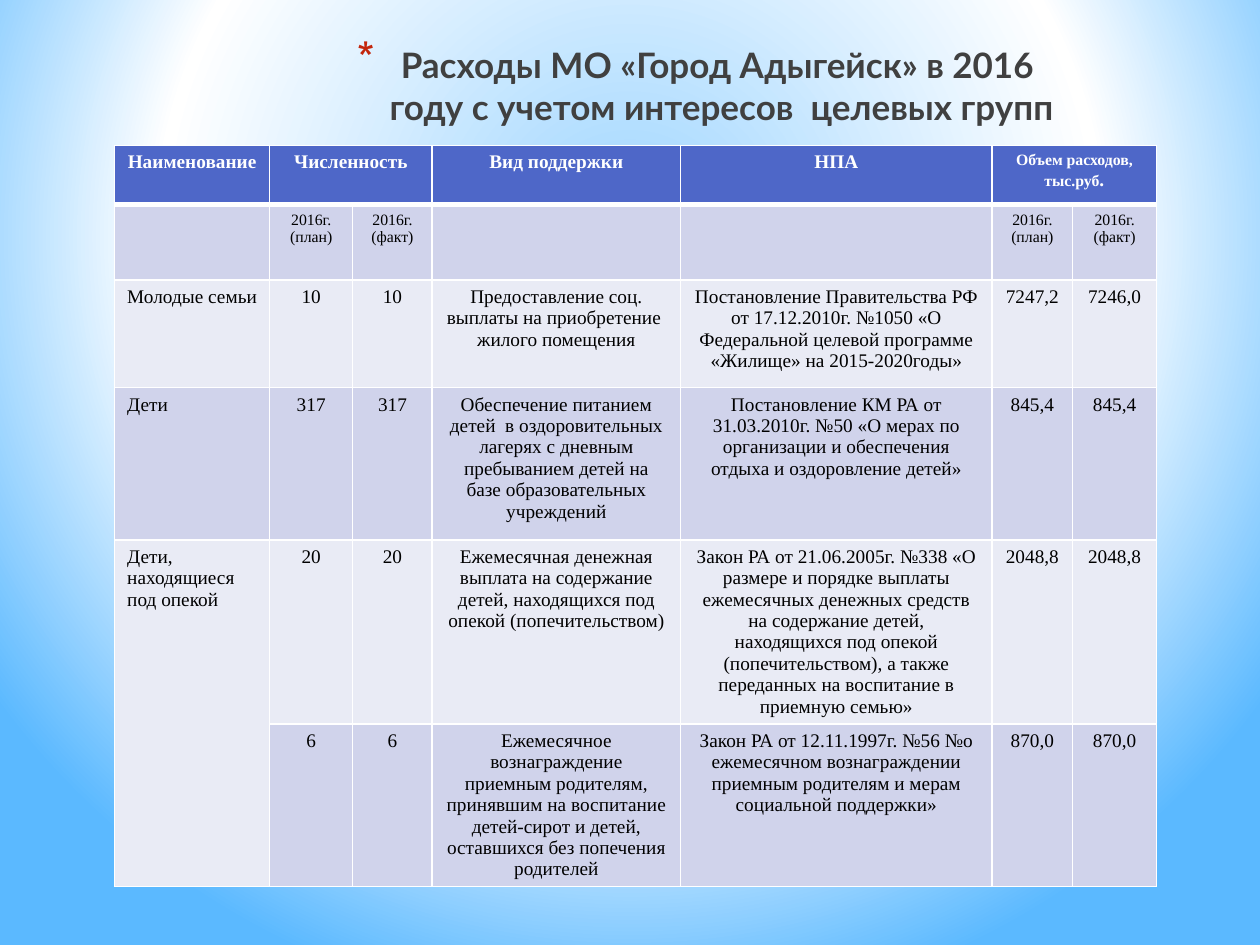
from pptx import Presentation
from pptx.dml.color import RGBColor
from pptx.enum.text import MSO_ANCHOR as Anchor, MSO_AUTO_SIZE as AutoSize, PP_ALIGN as Align
from pptx.oxml import parse_xml
from pptx.oxml.ns import nsdecls, qn
from pptx.util import Pt

WHITE, BLACK, TITLE, BULLET = "FFFFFF", "000000", "404040", "C3260C"
HEADER, BAND_DARK, BAND_LIGHT = "4E67C8", "D0D3EB", "E9EBF5"

COL_WIDTHS = [88.6, 47.5, 45.4, 142, 178, 46, 48]
ROW_HEIGHTS = [34, 43, 61.5, 87, 105, 93]
PLAN, FACT = "2016г. (план)", "2016г. (факт)"
ROWS = [
    ["Наименование", "Численность", "", "Вид поддержки", "НПА", "Объем расходов, тыс.руб", ""],
    ["", PLAN, FACT, "", "", PLAN, FACT],
    ["Молодые семьи", "10", "10",
     "Предоставление соц. выплаты на приобретение  жилого помещения",
     "Постановление Правительства РФ от 17.12.2010г. №1050 «О Федеральной целевой "
     "программе «Жилище» на 2015-2020годы»",
     "7247,2", "7246,0"],
    ["Дети", "317", "317",
     "Обеспечение питанием детей  в оздоровительных лагерях с дневным пребыванием "
     "детей на базе образовательных учреждений",
     "Постановление КМ РА от 31.03.2010г. №50 «О мерах по организации и обеспечения "
     "отдыха и оздоровление детей»",
     "845,4", "845,4"],
    ["Дети, находящиеся под опекой", "20", "20",
     "Ежемесячная денежная выплата на содержание детей, находящихся под опекой "
     "(попечительством)",
     "Закон РА от 21.06.2005г. №338 «О размере и порядке выплаты ежемесячных денежных "
     "средств на содержание детей, находящихся под опекой (попечительством), а также "
     "переданных на воспитание в приемную семью»",
     "2048,8", "2048,8"],
    ["", "6", "6",
     "Ежемесячное вознаграждение приемным родителям, принявшим на воспитание "
     "детей-сирот и детей, оставшихся без попечения родителей",
     "Закон РА от 12.11.1997г. №56 №о ежемесячном вознаграждении приемным родителям "
     "и мерам социальной поддержки»",
     "870,0", "870,0"],
]
# First and last cell of each merged area, as (row, column)
MERGES = [((0, 1), (0, 2)), ((0, 5), (0, 6)), ((4, 0), (5, 0))]


def rgb(color):
    return RGBColor.from_string(color)


class SlideBuilder:
    title_font = "Lato"
    table_font = "Times New Roman"

    def __init__(self, prs):
        self.s = prs.slides.add_slide(prs.slide_layouts[5])

    def background(self, stops, left, top, right, bottom):
        self.s.background.fill.solid()
        bg = self.s._element.find(".//" + qn("p:bgPr"))
        gs = "".join(f'<a:gs pos="{pos * 1000}"><a:srgbClr val="{color}"/></a:gs>'
                     for pos, color in stops)
        bg.replace(bg[0], parse_xml(
            f'<a:gradFill {nsdecls("a")} rotWithShape="1"><a:gsLst>{gs}</a:gsLst>'
            f'<a:path path="circle"><a:fillToRect l="{left * 1000}" t="{top * 1000}" '
            f'r="{right * 1000}" b="{bottom * 1000}"/></a:path></a:gradFill>'))

    def run(self, p, text, font, size, color, bold=False):
        r = p.add_run()
        r.text = text
        r.font.name, r.font.size, r.font.bold = font, Pt(size), bold
        r.font.color.rgb = rgb(color)

    def title(self, lines, x, y, w, h):
        sp = self.s.shapes.title
        sp.left, sp.top, sp.width, sp.height = Pt(x), Pt(y), Pt(w), Pt(h)
        tf = sp.text_frame
        tf.word_wrap, tf.auto_size = True, AutoSize.NONE
        tf.vertical_anchor = Anchor.TOP
        p = tf.paragraphs[0]
        p.alignment = Align.CENTER
        for i, line in enumerate(lines):
            if i:
                p.add_line_break()
            self.run(p, line, self.title_font, 20, TITLE, True)
        self.bullet(p, "*", 25)

    def bullet(self, p, char, indent):
        pPr = p._p.get_or_add_pPr()
        pPr.set("marL", str(Pt(indent)))
        pPr.set("indent", str(-Pt(indent)))
        for xml in (f'<a:buClr {nsdecls("a")}><a:srgbClr val="{BULLET}"/></a:buClr>',
                    f'<a:buSzPct {nsdecls("a")} val="128000"/>',
                    f'<a:buChar {nsdecls("a")} char="{char}"/>'):
            pPr.append(parse_xml(xml))

    def borders(self, cell, top, bottom):
        tcPr = cell._tc.get_or_add_tcPr()
        for i, (side, width) in enumerate(zip("LRTB", (1, 1, top, bottom))):
            tcPr.insert(i, parse_xml(
                f'<a:ln{side} {nsdecls("a")} w="{Pt(width)}"><a:solidFill>'
                f'<a:srgbClr val="{WHITE}"/></a:solidFill></a:ln{side}>'))

    def cell(self, cell, row, col, text):
        header = row == 0
        cell.fill.solid()
        cell.fill.fore_color.rgb = rgb(HEADER if header else BAND_DARK if row % 2 else BAND_LIGHT)
        self.borders(cell, 3 if row == 1 else 1, 3 if header else 1)
        if not text:
            return
        p = cell.text_frame.paragraphs[0]
        p.alignment = Align.LEFT if col == 0 and not header else Align.CENTER
        small = row == 1 or (header and col == 5)
        color = WHITE if header else BLACK
        self.run(p, text, self.table_font, 9 if small else 11, color, header)
        if header and small:
            self.run(p, ".", self.table_font, 11, color, True)

    def table(self, rows, x, y, widths, heights, merges):
        table = self.s.shapes.add_table(len(rows), len(widths), Pt(x), Pt(y),
                                        Pt(sum(widths)), Pt(sum(heights))).table
        for column, width in zip(table.columns, widths):
            column.width = Pt(width)
        for row, height in zip(table.rows, heights):
            row.height = Pt(height)
        for first, last in merges:
            table.cell(*first).merge(table.cell(*last))
        for i, texts in enumerate(rows):
            for j, text in enumerate(texts):
                self.cell(table.cell(i, j), i, j, text)


def main():
    prs = Presentation()
    prs.slide_width, prs.slide_height = Pt(720), Pt(540)
    slide = SlideBuilder(prs)
    # Background glow
    slide.background([(0, "9ED5FF"), (60, WHITE), (100, "5BB9FF")], 20, 10, 20, 60)
    # Title
    slide.title(["Расходы МО «Город Адыгейск» в 2016", " году с учетом интересов  целевых групп"],
                141, 21, 513, 102)
    # Spending by target group
    slide.table(ROWS, 65.5, 83, COL_WIDTHS, ROW_HEIGHTS, MERGES)
    prs.save("out.pptx")


if __name__ == "__main__":
    main()
